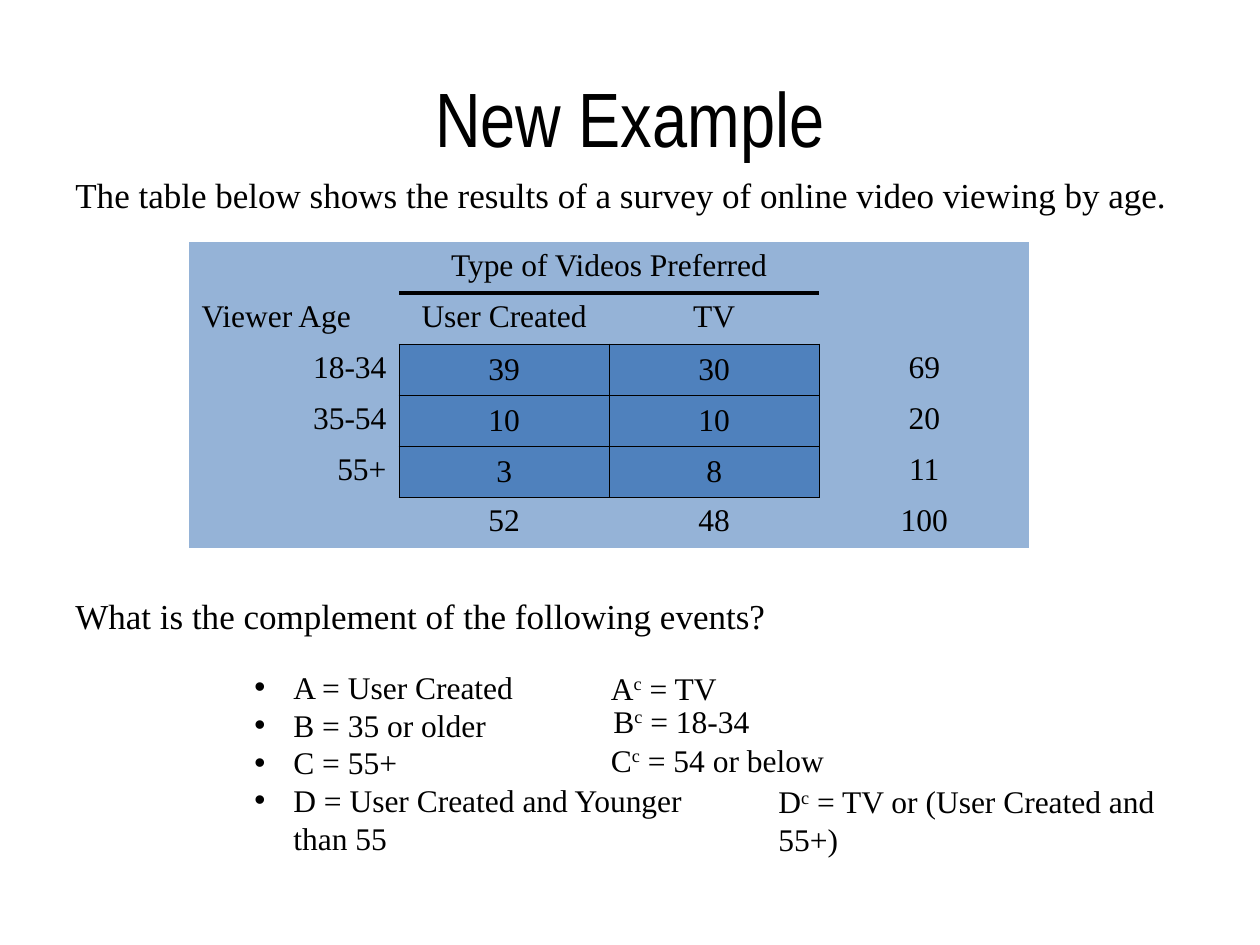
from lxml import etree
from pptx import Presentation
from pptx import util as u
from pptx.dml.color import RGBColor
from pptx.enum import text
from pptx.oxml import ns

BLACK, LIGHT_BLUE, MID_BLUE = "000000", "95B3D7", "4F81BD"
ALIGN = text.PP_ALIGN


def add_text(paragraph, content, size=18, font="Times New Roman"):
    run = paragraph.add_run()
    run.text = content
    for name, value in {"size": u.Pt(size), "name": font}.items():
        setattr(run.font, name, value)
    run.font.color.rgb = RGBColor.from_string(BLACK)
    return run


def add_box(slide, left, top, width, height):
    """Add a wrapping text box and return its text frame."""
    box = slide.shapes.add_textbox(*(u.Inches(n) for n in (left, top, width, height)))
    box.text_frame.word_wrap = True
    return box.text_frame


presentation = Presentation()
presentation.slide_width, presentation.slide_height = u.Inches(10), u.Inches(7.5)
slide = presentation.slides.add_slide(presentation.slide_layouts[5])

# Title
title = slide.shapes.title
placement = {"left": 0.5, "top": 0.3, "width": 9, "height": 1.25}
for name, value in placement.items():
    setattr(title, name, u.Inches(value))
title.text_frame.vertical_anchor = text.MSO_ANCHOR.MIDDLE
title_paragraph = title.text_frame.paragraphs[0]
title_paragraph.alignment = ALIGN.CENTER
add_text(title_paragraph, "New Example", 44, "Arial Narrow")

# Introduction and question
statements = [
    (1.33, 0.5, "The table below shows the results of a survey of online video viewing by age."),
    (4.67, 0.67, "What is the complement of the following events?"),
]
for top, height, content in statements:
    paragraph = add_box(slide, 0.5, top, 9, height).paragraphs[0]
    paragraph.space_before = u.Pt(2)
    add_text(paragraph, content, 20)

# Survey table
survey = [
    ["", "Type of Videos Preferred", "", ""],
    ["Viewer Age", "User Created", "TV", ""],
    ["18-34", "39", "30", "69"],
    ["35-54", "10", "10", "20"],
    ["55+", "3", "8", "11"],
    ["", "52", "48", "100"],
]
table = slide.shapes.add_table(
    6, 4, u.Inches(1.5), u.Inches(1.92), u.Inches(6.67), u.Inches(2.43)
).table
table.first_row = table.horz_banding = False
table.cell(0, 1).merge(table.cell(0, 2))

# Border widths in points, keyed by cell and side; shared edges are set on both cells
borders = {}
for column in (1, 2):
    borders[0, column, "B"] = borders[1, column, "T"] = 3
    for row in (2, 3, 4):
        neighbours = {"L": (0, -1, "R"), "R": (0, 1, "L"), "T": (-1, 0, "B"), "B": (1, 0, "T")}
        for side, (down, across, opposite) in neighbours.items():
            borders[row, column, side] = 0.5
            borders[row + down, column + across, opposite] = 0.5

for row, values in enumerate(survey):
    for column, value in enumerate(values):
        cell = table.cell(row, column)
        is_count = row in (2, 3, 4) and column in (1, 2)
        properties = cell._tc.get_or_add_tcPr()
        for side in "LRTB":
            width = borders.get((row, column, side), 0)
            line = etree.SubElement(properties, ns.qn(f"a:ln{side}"), w=str(u.Pt(width)))
            fill = etree.SubElement(line, ns.qn("a:solidFill" if width else "a:noFill"))
            if width:
                etree.SubElement(fill, ns.qn("a:srgbClr"), val=BLACK)
        cell.fill.solid()
        cell.fill.fore_color.rgb = RGBColor.from_string(MID_BLUE if is_count else LIGHT_BLUE)
        if is_count:
            cell.vertical_anchor = text.MSO_ANCHOR.MIDDLE
        if value:
            paragraph = cell.text_frame.paragraphs[0]
            if column:
                paragraph.alignment = ALIGN.CENTER
            else:
                paragraph.alignment = ALIGN.LEFT if row == 1 else ALIGN.RIGHT
            add_text(paragraph, value)

# Events
events = [
    "A = User Created",
    "B = 35 or older",
    "C = 55+",
    "D = User Created and Younger than 55",
]
frame = add_box(slide, 1.92, 5.25, 4.08, 1.62)
for index, event in enumerate(events):
    paragraph = frame.add_paragraph() if index else frame.paragraphs[0]
    add_text(paragraph, event)
    properties = paragraph._p.get_or_add_pPr()
    indent = u.Inches(0.31)
    properties.set("marL", str(indent))
    properties.set("indent", str(-indent))
    etree.SubElement(properties, ns.qn("a:buFont"), typeface="Arial")
    etree.SubElement(properties, ns.qn("a:buChar"), char="•")

# Complements
complements = [
    ("A", " = TV", 4.75, 5.26, 1.42, 0.4),
    ("B", " = 18-34", 4.77, 5.52, 1.4, 0.4),
    ("C", " = 54 or below", 4.75, 5.83, 2.42, 0.4),
    ("D", " = TV or (User Created and 55+)", 6.08, 6.16, 3.58, 0.71),
]
for event, meaning, *position in complements:
    paragraph = add_box(slide, *position).paragraphs[0]
    add_text(paragraph, event)
    superscript = add_text(paragraph, "c")
    superscript._r.get_or_add_rPr().set("baseline", "30000")
    add_text(paragraph, meaning)

presentation.save("out.pptx")
